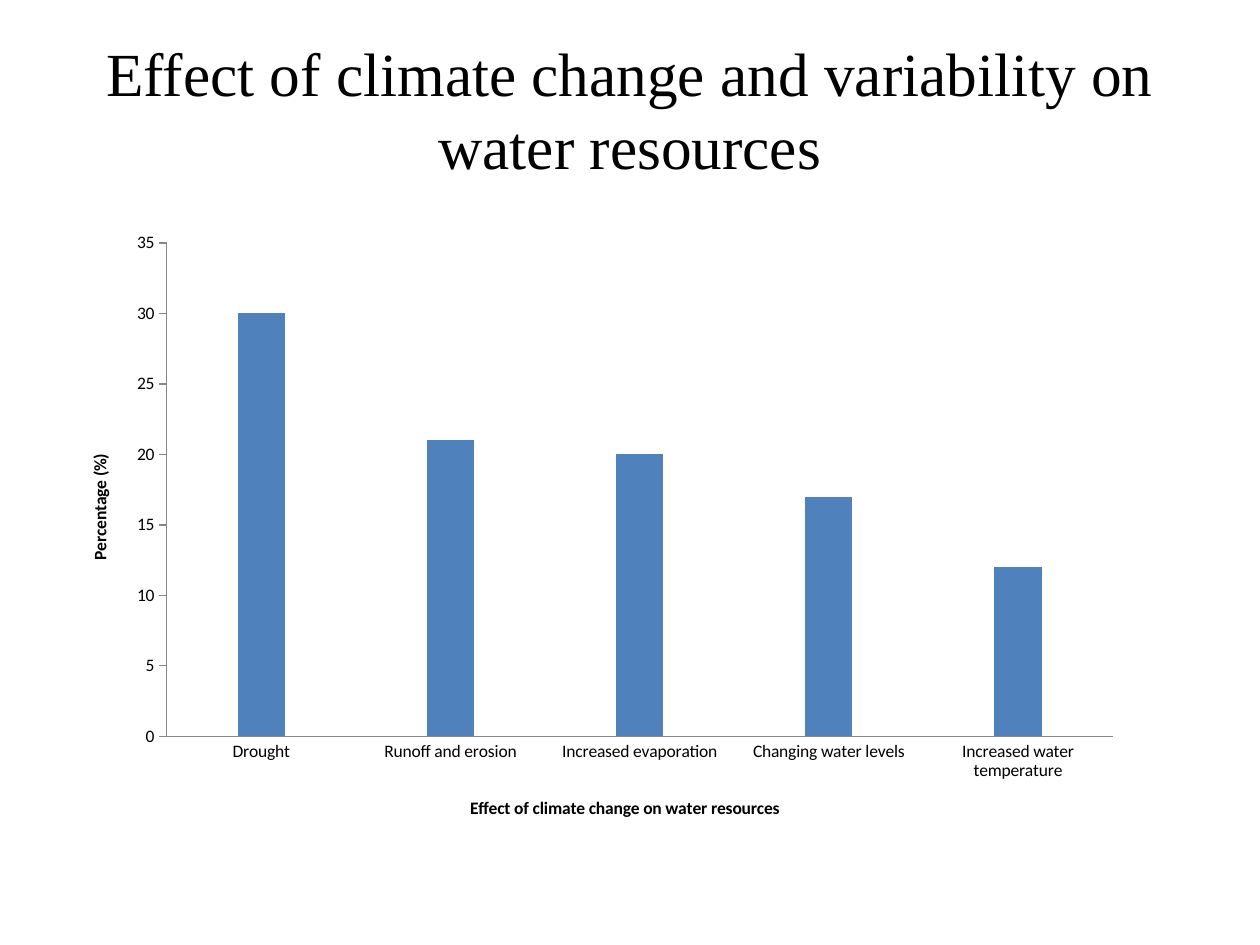
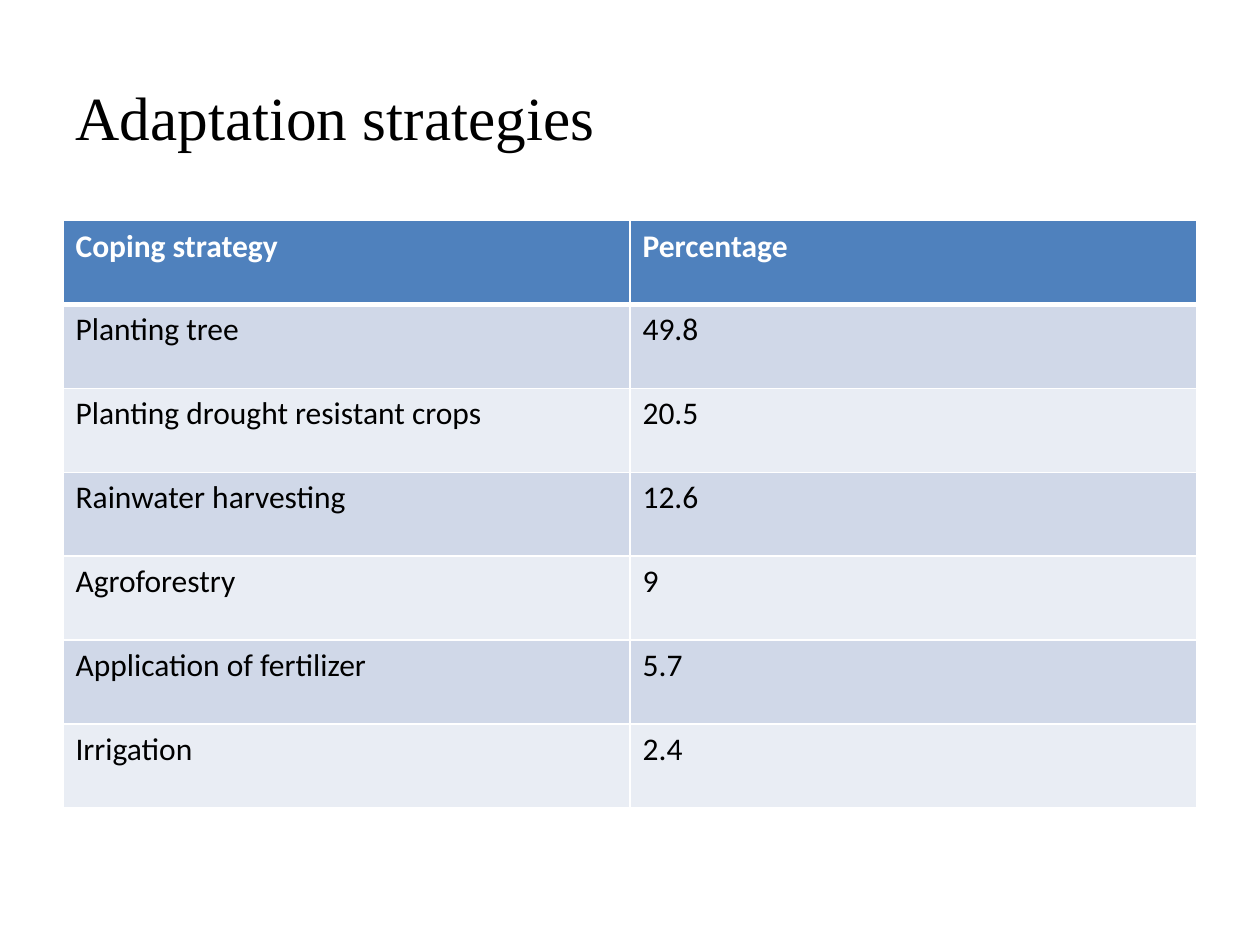
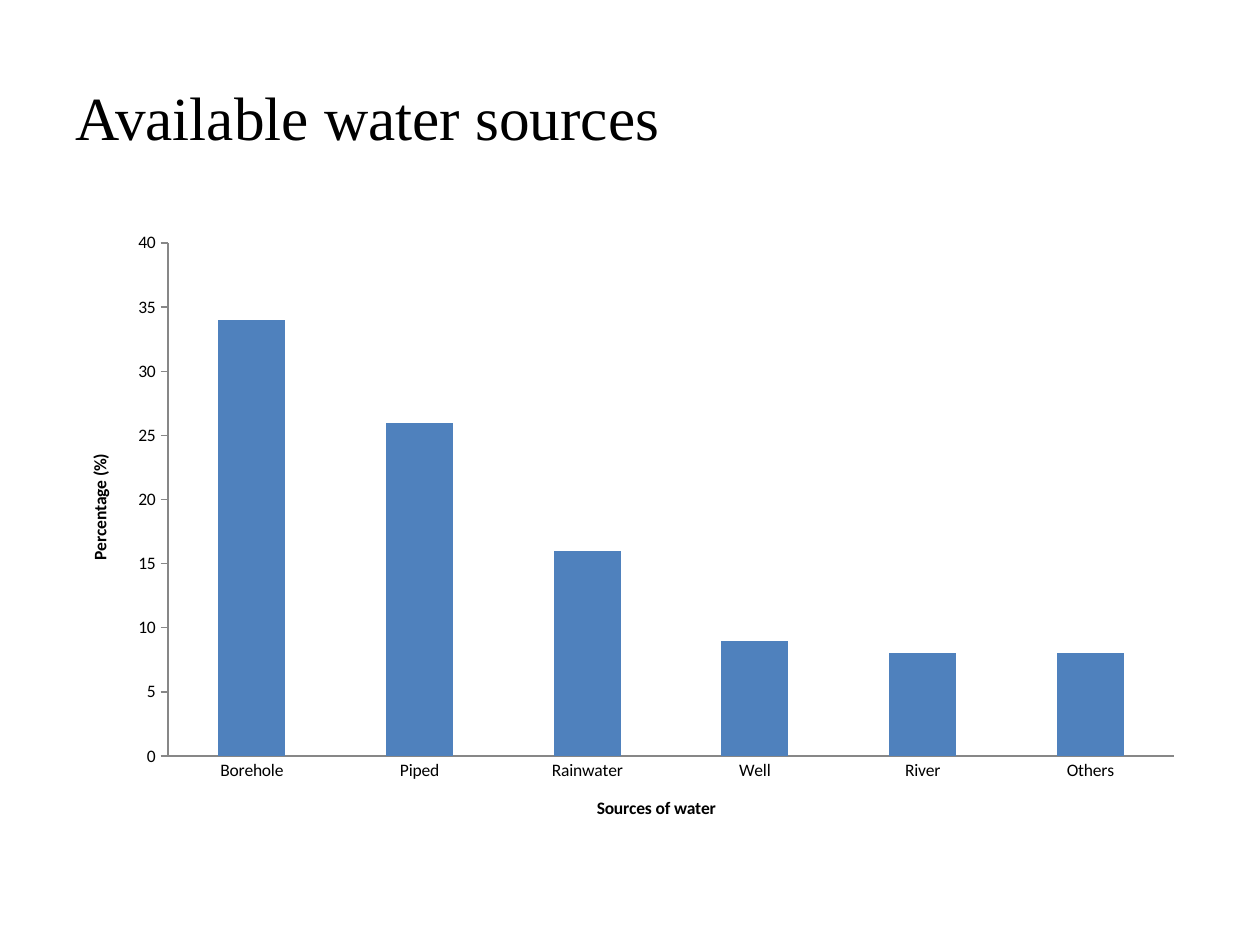
from lxml import etree
from pptx import Presentation
from pptx.chart.data import CategoryChartData
from pptx.dml.color import RGBColor
from pptx.enum.chart import XL_CHART_TYPE, XL_TICK_MARK
from pptx.enum.text import MSO_ANCHOR, PP_ALIGN
from pptx.oxml.ns import qn
from pptx.util import Cm, Pt

COLUMNS = XL_CHART_TYPE.COLUMN_CLUSTERED
TICK_NONE, TICK_OUTSIDE = XL_TICK_MARK.NONE, XL_TICK_MARK.OUTSIDE
LEFT, CENTER, MIDDLE = PP_ALIGN.LEFT, PP_ALIGN.CENTER, MSO_ANCHOR.MIDDLE

BLACK = RGBColor(0x00, 0x00, 0x00)
WHITE = RGBColor(0xFF, 0xFF, 0xFF)
BLUE = RGBColor(0x4F, 0x81, 0xBD)
DARK_BAND = RGBColor(0xD0, 0xD8, 0xE8)
LIGHT_BAND = RGBColor(0xE9, 0xED, 0xF4)
AXIS_GRAY = RGBColor(0x87, 0x87, 0x87)

TITLE_FONT, BODY_FONT = "Times New Roman", "Calibri"
MARGIN, CONTENT_WIDTH = Cm(1.27), Cm(22.86)
TITLE_TOP, TITLE_HEIGHT = Cm(0.76), Cm(3.18)
CONTENT_TOP, CHART_HEIGHT, ROW_HEIGHT = Cm(4.45), Cm(12.57), Cm(1.69)

WATER_EFFECTS = {
    "Drought": 30,
    "Runoff and erosion": 21,
    "Increased evaporation": 20,
    "Changing water levels": 17,
    "Increased water temperature": 12,
}
STRATEGIES = [
    ("Coping strategy", "Percentage"),
    ("Planting tree", "49.8"),
    ("Planting drought resistant crops", "20.5"),
    ("Rainwater harvesting", "12.6"),
    ("Agroforestry", "9"),
    ("Application of fertilizer", "5.7"),
    ("Irrigation", "2.4"),
]
WATER_SOURCES = {
    "Borehole": 34,
    "Piped": 26,
    "Rainwater": 16,
    "Well": 9,
    "River": 8,
    "Others": 8,
}


class Deck:
    """Presentation with one shared style and a current slide."""

    def __init__(self):
        self.presentation = Presentation()
        self.presentation.slide_width = Cm(25.4)
        self.presentation.slide_height = Cm(19.05)
        self.slide = None

    def add_slide(self, title, alignment=LEFT, bottom_inset=Cm(0.13)):
        layout = self.presentation.slide_layouts[6]
        self.slide = self.presentation.slides.add_slide(layout)
        shape = self.slide.shapes.add_textbox(MARGIN, TITLE_TOP, CONTENT_WIDTH, TITLE_HEIGHT)
        text_frame = shape.text_frame
        text_frame.word_wrap = True
        text_frame.vertical_anchor = MIDDLE
        text_frame.margin_bottom = bottom_inset
        text_frame.text = title
        paragraph = text_frame.paragraphs[0]
        paragraph.alignment = alignment
        self.style_font(paragraph.runs[0].font, 35, BLACK, name=TITLE_FONT)

    def style_font(self, font, size, color, bold=False, name=BODY_FONT):
        font.name = name
        font.size = Pt(size)
        font.bold = bold
        font.color.rgb = color

    def add_column_chart(self, values, category_title, gap_width, width=CONTENT_WIDTH):
        chart_data = CategoryChartData()
        chart_data.categories = list(values)
        chart_data.add_series("Series 1", list(values.values()))
        chart = self.slide.shapes.add_chart(
            COLUMNS, MARGIN, CONTENT_TOP, width, CHART_HEIGHT, chart_data
        ).chart
        chart.has_title = False
        chart.has_legend = False
        self.style_font(chart.font, 10, BLACK)
        plot = chart.plots[0]
        plot.gap_width = gap_width
        plot.vary_by_categories = False
        fill = plot.series[0].format.fill
        fill.solid()
        fill.fore_color.rgb = BLUE
        self.style_axis(chart.category_axis, category_title, TICK_NONE)
        self.style_axis(chart.value_axis, "Percentage (%)", TICK_OUTSIDE)

    def style_axis(self, axis, title, tick_mark):
        axis.has_major_gridlines = False
        axis.major_tick_mark = tick_mark
        axis.minor_tick_mark = TICK_NONE
        axis.format.line.color.rgb = AXIS_GRAY
        axis.format.line.width = Pt(0.75)
        text_frame = axis.axis_title.text_frame
        text_frame.text = title
        self.style_font(text_frame.paragraphs[0].runs[0].font, 10, BLACK, bold=True)

    def add_table(self, rows):
        column_count = len(rows[0])
        table = self.slide.shapes.add_table(
            len(rows), column_count, MARGIN, CONTENT_TOP,
            CONTENT_WIDTH, ROW_HEIGHT * len(rows),
        ).table
        table.horz_banding = False
        for row_index, texts in enumerate(rows):
            is_header = row_index == 0
            band = DARK_BAND if row_index % 2 else LIGHT_BAND
            for column_index, text in enumerate(texts):
                cell = table.cell(row_index, column_index)
                cell.text = text
                font = cell.text_frame.paragraphs[0].runs[0].font
                self.style_font(font, 18, WHITE if is_header else BLACK, bold=is_header)
                self.set_borders(
                    cell, top=3 if row_index == 1 else 1, bottom=3 if is_header else 1
                )
                cell.fill.solid()
                cell.fill.fore_color.rgb = BLUE if is_header else band

    def set_borders(self, cell, top, bottom):
        properties = cell._tc.get_or_add_tcPr()
        for side, width in (("L", 1), ("R", 1), ("T", top), ("B", bottom)):
            line = etree.SubElement(properties, qn(f"a:ln{side}"), w=str(Pt(width)))
            fill = etree.SubElement(line, qn("a:solidFill"))
            etree.SubElement(fill, qn("a:srgbClr"), val=str(WHITE))


def main():
    deck = Deck()
    deck.add_slide(
        "Effect of climate change and variability on water resources",
        CENTER, bottom_inset=Cm(0.45),
    )
    deck.add_column_chart(
        WATER_EFFECTS, "Effect of climate change on water resources", 300, Cm(21.59)
    )
    deck.add_slide("Adaptation strategies")
    deck.add_table(STRATEGIES)
    deck.add_slide("Available water sources")
    deck.add_column_chart(WATER_SOURCES, "Sources of water", 150)
    deck.presentation.save("out.pptx")


if __name__ == "__main__":
    main()
